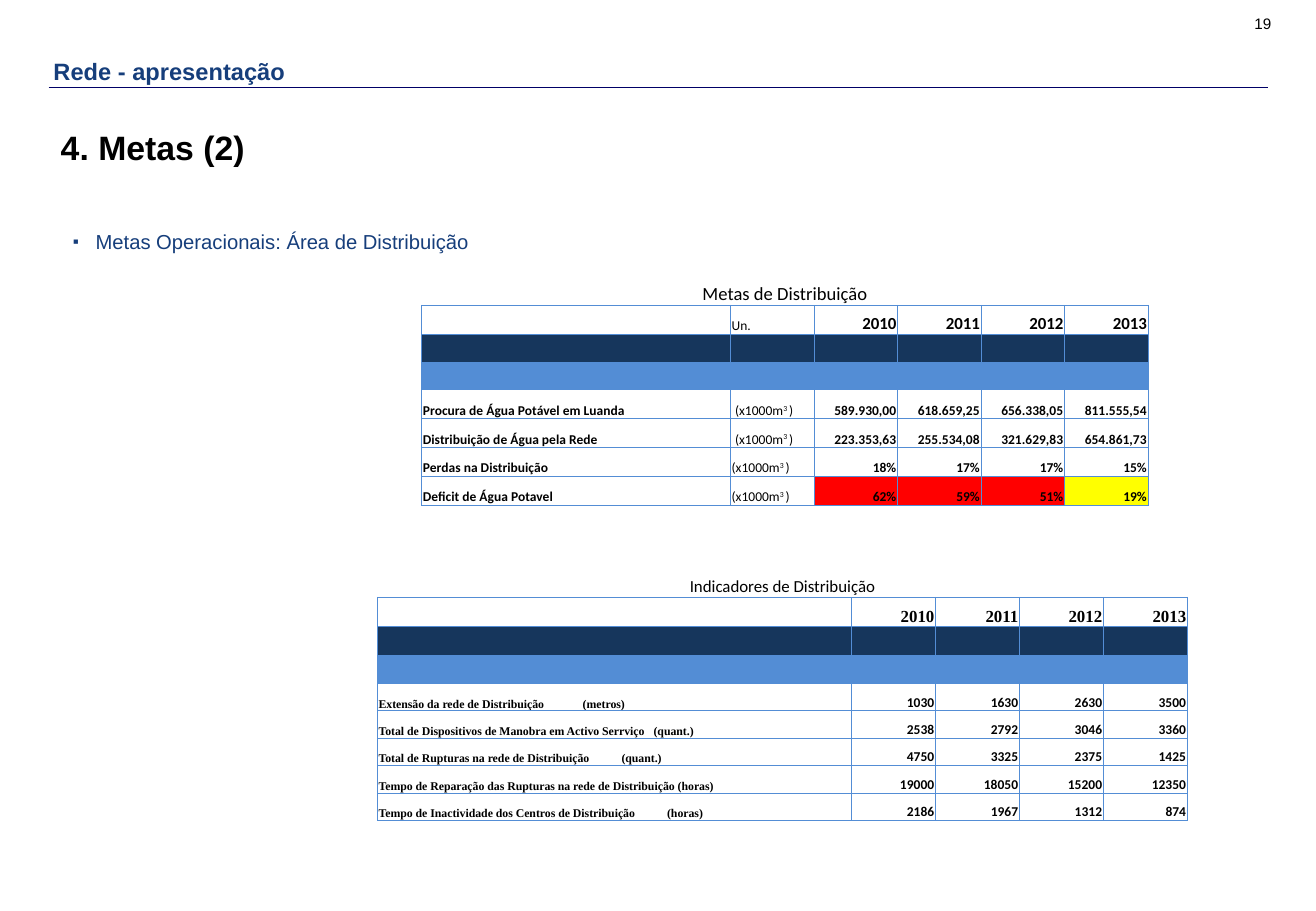
from dataclasses import dataclass

from lxml.etree import SubElement as Sub
from pptx import Presentation
from pptx.dml.color import RGBColor as Rgb
from pptx.enum.shapes import MSO_CONNECTOR as Link
from pptx.enum.text import MSO_ANCHOR as Anchor, MSO_AUTO_SIZE as Fit, PP_ALIGN as Align
from pptx.oxml.ns import qn
from pptx.util import Pt


@dataclass(frozen=True)
class Theme:
    sans: str = "Arial"
    cell: str = "Calibri"
    serif: str = "Times New Roman"
    black: str = "000000"
    blue: str = "163E7B"
    rule: str = "000066"
    navy: str = "16365C"
    sky: str = "538DD5"
    red: str = "FF0000"
    gold: str = "FFFF00"
    head: int = 14
    topic: int = 20
    point: int = 12
    page: int = 9
    year: int = 10
    small: int = 8
    tiny: int = 7


T = Theme()
YEARS = ["2010", "2011", "2012", "2013"]
PLAIN = "{2D5ABB26-0587-4C30-8999-92F81FD0307C}"  # no style, no grid

GOALS = [
    ("Procura de Água Potável em Luanda", 2,
     ["589.930,00", "618.659,25", "656.338,05", "811.555,54"]),
    ("Distribuição de Água pela Rede", 2,
     ["223.353,63", "255.534,08", "321.629,83", "654.861,73"]),
    ("Perdas na Distribuição", 0, ["18%", "17%", "17%", "15%"]),
    ("Deficit de Água Potavel", 0, ["62%", "59%", "51%", "19%"]),
]
ALERTS = [T.red, T.red, T.red, T.gold]

# label, unit, tab stop of the unit, values
RATES = [
    ("Extensão da rede de Distribuição", "(metros)", 121,
     [1030, 1630, 2630, 3500]),
    ("Total de Dispositivos de Manobra em Activo Serrviço", "(quant.)", 163,
     [2538, 2792, 3046, 3360]),
    ("Total de Rupturas na rede de Distribuição", "(quant.)", 144,
     [4750, 3325, 2375, 1425]),
    ("Tempo de Reparação das Rupturas na rede de Distribuição", "(horas)", 0,
     [19000, 18050, 15200, 12350]),
    ("Tempo de Inactividade dos Centros de Distribuição", "(horas)", 171,
     [2186, 1967, 1312, 874]),
]


def put(par, text, size, face=T.cell, color=T.black, bold=False):
    run = par.add_run()
    run.text = text
    font = run.font
    font.size, font.name, font.bold = Pt(size), face, bold
    font.color.rgb = Rgb.from_string(color)
    return run


def place(shape, box, pad, anchor):
    """Move a text shape into its box and set its insets."""
    shape.left, shape.top, shape.width, shape.height = map(Pt, box)
    frame = shape.text_frame
    frame.auto_size, frame.word_wrap = Fit.NONE, True
    frame.vertical_anchor = anchor
    frame.margin_left = frame.margin_right = Pt(pad)
    frame.margin_top = frame.margin_bottom = Pt(3.6)
    par = frame.paragraphs[0]
    par.space_before = Pt(0)
    return par


def header(slide, box):
    x, y, w, h = box
    # Page number
    page = slide.shapes.add_textbox(0, 0, 0, 0)
    par = place(page, (x + w - 153.5, y - 8, 162, 20), 6.8, Anchor.MIDDLE)
    par.alignment = Align.RIGHT
    put(par, "19", T.page, T.sans)
    # Rule
    base = Pt(y + 39.6)
    rule = slide.shapes.add_connector(Link.STRAIGHT, Pt(x), base, Pt(x + w), base)
    rule.line.color.rgb = Rgb.from_string(T.rule)
    rule.line.width = Pt(0.75)
    Sub(rule._element.spPr, qn("a:effectLst"))
    # Title
    par = place(slide.shapes.title, box, 2.9, Anchor.MIDDLE)
    par.alignment = Align.LEFT
    put(par, "Rede - apresentação", T.head, T.sans, T.blue, True)


def item(shape, box, text, size, color, bold=False, mark=None):
    par = place(shape, box, 7.2, Anchor.TOP)
    par.alignment = Align.JUSTIFY
    props = par._p.get_or_add_pPr()
    props.set("marL", str(Pt(13.5)))
    props.set("indent", str(Pt(-13.5)))
    if mark:
        tint = Sub(props, qn("a:buClr"))
        Sub(tint, qn("a:srgbClr"), val=color)
        Sub(props, qn("a:buSzPct"), val="85000")
        Sub(props, qn("a:buFont"), typeface=T.sans)
        Sub(props, qn("a:buChar"), char=mark)
    else:
        Sub(props, qn("a:buNone"))
    put(par, text, size, T.sans, color, bold)


def frame_cell(cell, sides, fill=None):
    """Set the insets, the borders on the given sides, and the fill."""
    cell.margin_left = cell.margin_right = cell.margin_top = Pt(0.7)
    cell.margin_bottom = 0
    cell.vertical_anchor = Anchor.BOTTOM
    props = cell._tc.get_or_add_tcPr()
    for side in "LRTB":
        line = Sub(props, qn("a:ln" + side), w=str(Pt(0.5)))
        if side in sides:
            paint = Sub(line, qn("a:solidFill"))
            Sub(paint, qn("a:srgbClr"), val=T.sky)
        else:
            Sub(line, qn("a:noFill"))
    if fill:
        cell.fill.solid()
        cell.fill.fore_color.rgb = Rgb.from_string(fill)
    else:
        cell.fill.background()
    # Small end mark so that empty rows stay low
    Sub(cell.text_frame.paragraphs[0]._p, qn("a:endParaRPr"), sz="800")


def write(cell, text, size, face=T.cell, bold=True, align=Align.LEFT):
    par = cell.text_frame.paragraphs[0]
    par.alignment = align
    put(par, text, size, face, bold=bold)
    return par


def grid(slide, box, widths, heights, title, size, face):
    """Make a table with its caption, its years and two colour bands."""
    shape = slide.shapes.add_table(len(heights), len(widths), *map(Pt, box))
    table = shape.table
    table.first_row = table.horz_banding = False
    table._tbl.tblPr.find(qn("a:tableStyleId")).text = PLAIN
    for col, width in zip(table.columns, widths):
        col.width = Pt(width)
    bands = {2: T.navy, 3: T.sky}
    for i, height in enumerate(heights):
        table.rows[i].height = Pt(height)
        for j in range(len(widths)):
            frame_cell(table.cell(i, j), "LRTB" if i else "B", bands.get(i))
    table.cell(0, 0).merge(table.cell(0, len(widths) - 1))
    write(table.cell(0, 0), title, size, bold=False, align=Align.CENTER)
    values(table, 1, YEARS, T.year, face)
    return table


def values(table, row, items, size, face=T.cell):
    start = len(table.columns) - len(items)
    for j, text in enumerate(items, start):
        write(table.cell(row, j), str(text), size, face, align=Align.RIGHT)


def goals(slide, box):
    widths = [183] + [(box[2] - 183) / 5] * 5
    heights = [18.3, 17.2, 16.4, 16.5] + [17.15] * 4
    table = grid(slide, box, widths, heights, "Metas de Distribuição", 11, T.cell)
    write(table.cell(1, 1), "Un.", T.small, bold=False)
    for i, (label, shift, nums) in enumerate(GOALS, 4):
        write(table.cell(i, 0), label, T.small)
        unit = table.cell(i, 1)
        unit.margin_left = Pt(0.7 + shift)
        par = write(unit, "(x1000m", T.small, bold=False)
        power = put(par, "3 ", T.small)
        power._r.get_or_add_rPr().set("baseline", "30000")
        put(par, ")", T.small)
        values(table, i, nums, T.small)
    for j, color in enumerate(ALERTS, 2):
        fill = table.cell(len(heights) - 1, j).fill
        fill.solid()
        fill.fore_color.rgb = Rgb.from_string(color)


def rates(slide, box):
    widths = [281] + [(box[2] - 281) / 4] * 4
    heights = [16.4, 17.2, 17, 16.8] + [16.25] * 5
    table = grid(slide, box, widths, heights, "Indicadores de Distribuição", 10, T.serif)
    for i, (label, unit, stop, nums) in enumerate(RATES, 4):
        gap = "\t" if stop else " "
        par = write(table.cell(i, 0), label + gap + unit, T.tiny, T.serif)
        if stop:
            tabs = Sub(par._p.get_or_add_pPr(), qn("a:tabLst"))
            Sub(tabs, qn("a:tab"), pos=str(Pt(stop)), algn="l")
        values(table, i, nums, T.small)


def main():
    deck = Presentation()
    deck.slide_width, deck.slide_height = Pt(780), Pt(540)
    slide = deck.slides.add_slide(deck.slide_layouts[3])
    topic, point = slide.placeholders[1], slide.placeholders[2]
    header(slide, (28.8, 12.2, 723, 59.8))
    item(topic, (28.8, 71.5, 713, 37), "4. Metas (2)", T.topic, T.black, True)
    item(point, (36, 132.5, 335, 25), "Metas Operacionais: Área de Distribuição",
         T.point, T.blue, mark="▪")
    goals(slide, (250, 162.7, 430.5, 137))
    rates(slide, (223.7, 337.7, 480, 148.6))
    deck.save("out.pptx")


if __name__ == "__main__":
    main()
